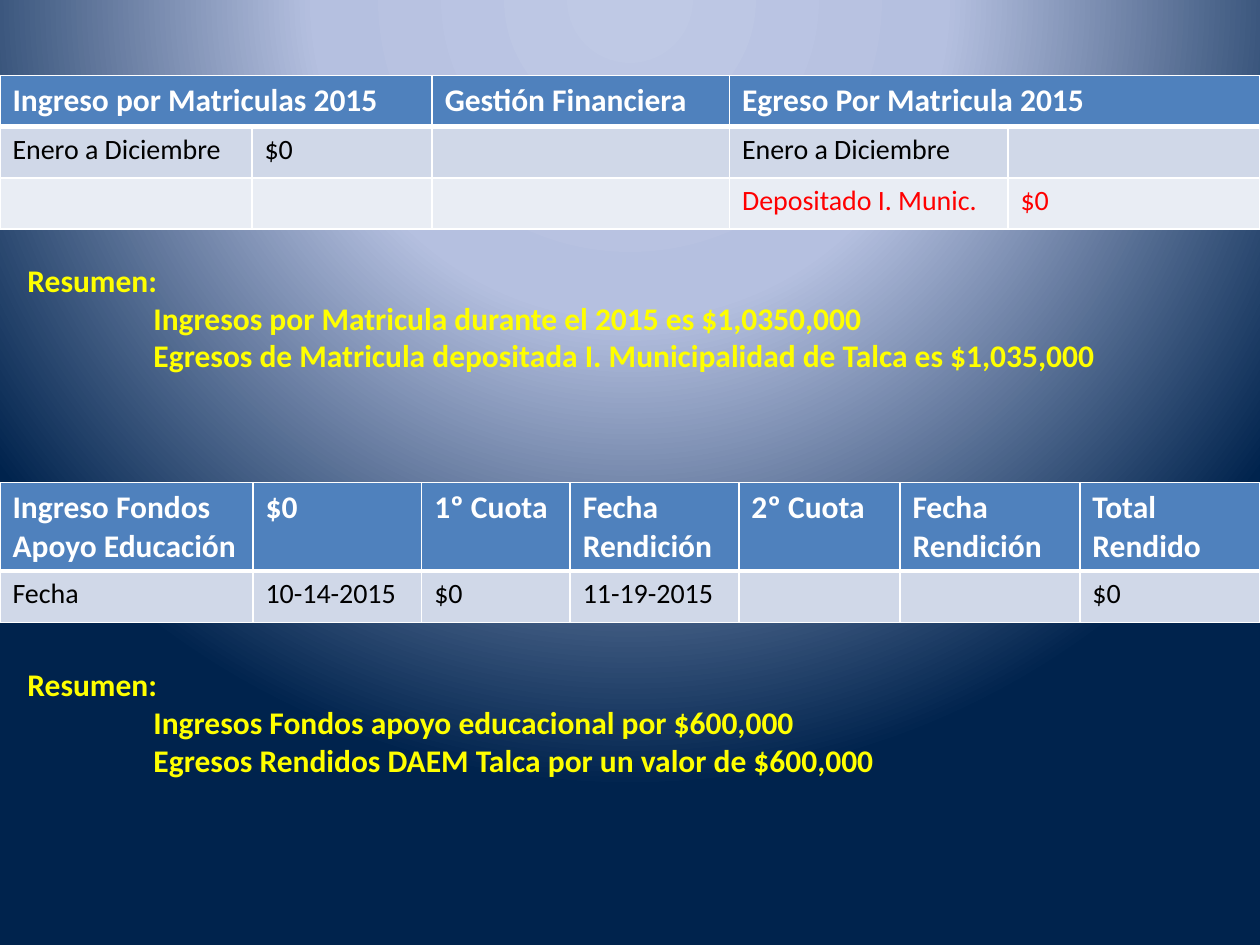
from lxml import etree
from pptx import Presentation
from pptx.dml.color import RGBColor
from pptx.enum.text import MSO_AUTO_SIZE
from pptx.oxml.ns import qn
from pptx.util import Inches, Pt

GROW = MSO_AUTO_SIZE.SHAPE_TO_FIT_TEXT
WIDE, HIGH = 10, 7.5
FONT = "Calibri"
HUES = {
    "head": "4F81BD", "odd": "D0D8E8", "even": "E9EDF4",
    "white": "FFFFFF", "black": "000000", "red": "FF0000", "gold": "FFFF00",
}
GLOW = [(0, "BFC9E5"), (40, "B5C0E0"), (100, "00234D")]
FOCUS = {"l": 50, "t": -80, "r": 50, "b": 180}

TABLES = [
    {
        "top": 0.6, "cols": [2, 1.43, 2.36, 2.21, 2], "rows": [1.22 / 3] * 3,
        "spans": [(0, 1), (3, 4)], "red": 2,
        "data": [
            ["Ingreso por Matriculas 2015", "", "Gestión Financiera",
             "Egreso Por Matricula 2015", ""],
            ["Enero a Diciembre", "$0", "", "Enero a Diciembre", ""],
            ["", "", "", "Depositado I. Munic.", "$0"],
        ],
    },
    {
        "top": 3.83, "cols": [2.01, 1.34, 1.18, 1.34, 1.28, 1.43, 1.43],
        "rows": [0.7, 0.41], "spans": [], "red": None,
        "data": [
            ["Ingreso Fondos Apoyo Educación", "$0", "1º Cuota",
             "Fecha Rendición", "2º Cuota", "Fecha Rendición", "Total Rendido"],
            ["Fecha", "10-14-2015", "$0", "11-19-2015", "", "", "$0"],
        ],
    },
]
NOTES = [
    (2.02, ["Resumen:",
            "\tIngresos por Matricula durante el 2015 es $1,0350,000",
            "\tEgresos de Matricula depositada I. Municipalidad de Talca es $1,035,000"]),
    (5.23, ["Resumen:",
            "\tIngresos Fondos apoyo educacional por $600,000",
            "\tEgresos Rendidos DAEM Talca por un valor de $600,000"]),
]


def tint(hue):
    return RGBColor.from_string(HUES[hue])


def write(frame, lines, size=18, hue="white", bold=True, tab=None):
    for i, line in enumerate(lines):
        para = frame.paragraphs[0] if i == 0 else frame.add_paragraph()
        para.font.size = Pt(size)
        if tab:
            tabs = etree.Element(qn("a:tabLst"))
            etree.SubElement(tabs, qn("a:tab"), pos=str(Inches(tab)), algn="l")
            para._p.get_or_add_pPr().insert(0, tabs)
        if not line:
            continue
        run = para.add_run()
        run.text = line
        run.font.name = FONT
        run.font.size = Pt(size)
        run.font.bold = bold
        run.font.color.rgb = tint(hue)


def paint(node, hue):
    etree.SubElement(node, qn("a:srgbClr"), val=hue)


def edge(cell, base):
    props = cell._tc.get_or_add_tcPr()
    sides = [("lnL", 1), ("lnR", 1), ("lnT", 1), ("lnB", base)]
    for i, (side, width) in enumerate(sides):
        line = etree.Element(qn(f"a:{side}"), w=str(Pt(width)))
        paint(etree.SubElement(line, qn("a:solidFill")), HUES["white"])
        props.insert(i, line)


def backdrop(slide):
    slide.background.fill.gradient()
    grad = next(slide.element.iter(qn("a:gradFill")))
    for child in list(grad):
        grad.remove(child)
    stops = etree.SubElement(grad, qn("a:gsLst"))
    for pos, hue in GLOW:
        paint(etree.SubElement(stops, qn("a:gs"), pos=str(pos * 1000)), hue)
    ring = etree.SubElement(grad, qn("a:path"), path="circle")
    rect = {side: str(share * 1000) for side, share in FOCUS.items()}
    etree.SubElement(ring, qn("a:fillToRect"), **rect)


def grid(slide, top, cols, rows, spans, red, data):
    frame = slide.shapes.add_table(
        len(rows), len(cols), 0, Inches(top), Inches(WIDE), Inches(sum(rows)))
    table = frame.table
    for col, width in zip(table.columns, cols):
        col.width = Inches(WIDE * width / sum(cols))
    for row, height in zip(table.rows, rows):
        row.height = Inches(height)
    for r, row in enumerate(data):
        head = r == 0
        fill = "head" if head else "odd" if r % 2 else "even"
        hue = "white" if head else "red" if r == red else "black"
        for c, text in enumerate(row):
            cell = table.cell(r, c)
            cell.fill.solid()
            cell.fill.fore_color.rgb = tint(fill)
            edge(cell, 3 if head else 1)
            write(cell.text_frame, [text], size=18 if head else 16,
                  hue=hue, bold=head)
    for first, last in spans:
        table.cell(0, first).merge(table.cell(0, last))


def note(slide, top, lines):
    box = slide.shapes.add_textbox(
        Inches(0.12), Inches(top), Inches(WIDE), Inches(1.01))
    box.text_frame.word_wrap = True
    box.text_frame.auto_size = GROW
    write(box.text_frame, lines, hue="gold", tab=1)


def main():
    deck = Presentation()
    deck.slide_width, deck.slide_height = Inches(WIDE), Inches(HIGH)
    slide = deck.slides.add_slide(deck.slide_layouts[6])
    backdrop(slide)
    for table, (top, lines) in zip(TABLES, NOTES):
        grid(slide, **table)
        note(slide, top, lines)
    deck.save("out.pptx")


if __name__ == "__main__":
    main()
